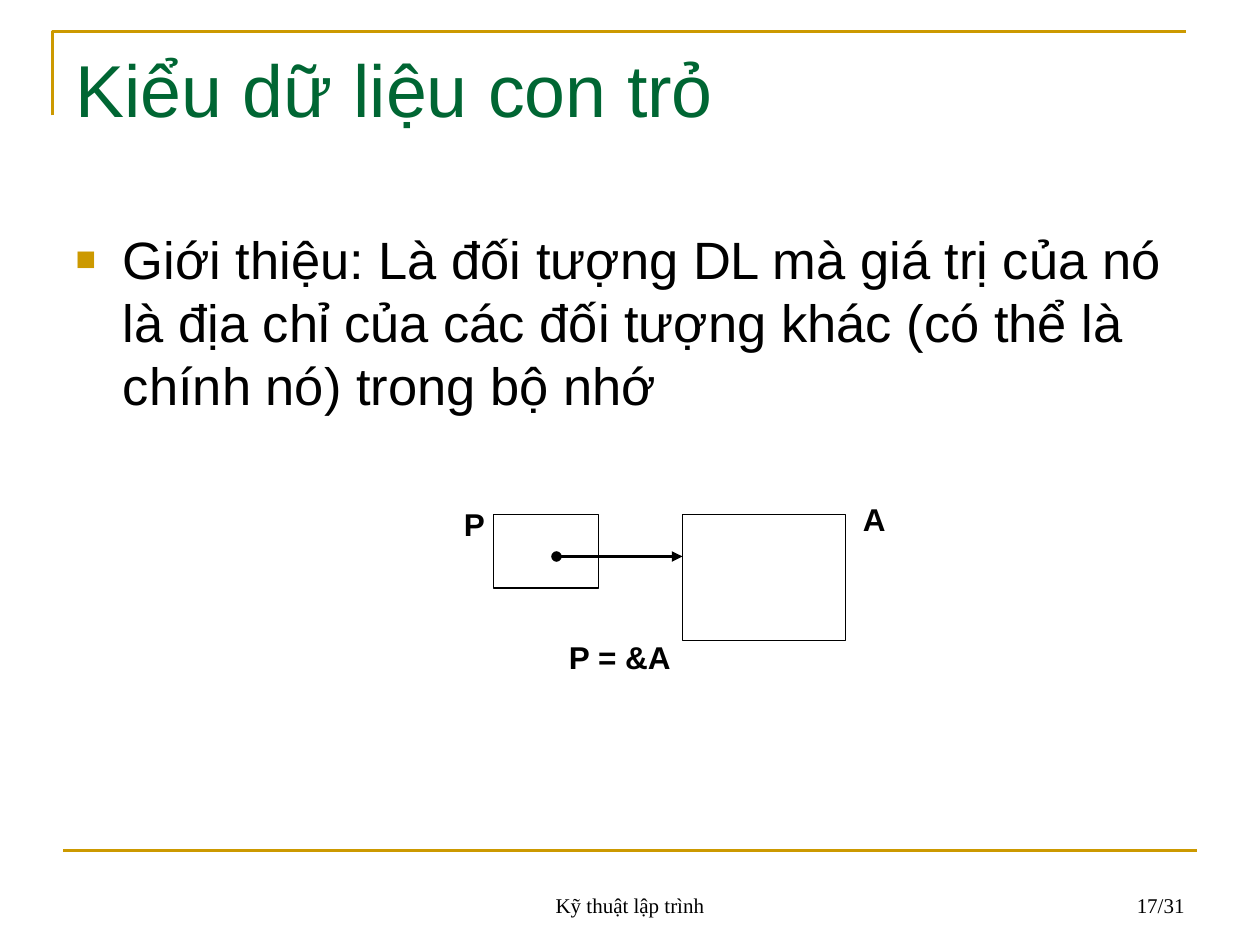
"""Build the slide that introduces the pointer data type."""
import pptx
import pptx.util
import pptx.dml.color
import pptx.enum.shapes
import pptx.enum.text
import pptx.oxml
import pptx.oxml.ns

Pt = pptx.util.Pt
RGB = pptx.dml.color.RGBColor
Align = pptx.enum.text.PP_ALIGN
Anchor = pptx.enum.text.MSO_ANCHOR
Fit = pptx.enum.text.MSO_AUTO_SIZE
Rect = pptx.enum.shapes.MSO_SHAPE.RECTANGLE
Straight = pptx.enum.shapes.MSO_CONNECTOR.STRAIGHT

GOLD = RGB(0xCC, 0x99, 0x00)
GREEN = RGB(0x00, 0x66, 0x33)
BLACK = RGB(0, 0, 0)
WHITE = RGB(255, 255, 255)

TITLE = "Kiểu dữ liệu con trỏ"
BODY = ("Giới thiệu: Là đối tượng DL mà giá trị của nó là địa chỉ "
        "của các đối tượng khác (có thể là chính nó) trong bộ nhớ")
FOOTERS = [
    ("Kỹ thuật lập trình", (246, 492, 228, 36), Align.CENTER),
    ("17/31", (516, 492, 168, 36), Align.RIGHT),
]
LABELS = [
    ("P = &A", (318, 361, 90, 41)),
    ("A", (486, 282, 27, 41)),
    ("P", (258, 285, 27, 41)),
]
BOXES = [(282, 294, 60, 42), (390, 294, 93, 72)]
CORNER = [(30, 66), (30, 18), (678, 18)]
RULE = (36, 486, 684, 486)
ARROW = (318, 318, 390, 318)

FONTS = {
    "title": {"name": "Arial", "size": Pt(42), "color": GREEN},
    "body": {"name": "Arial", "size": Pt(30), "color": BLACK},
    "label": {"name": "Arial", "size": Pt(18), "bold": True, "color": BLACK},
    "foot": {"name": "Times New Roman", "size": Pt(12), "color": BLACK},
}


def place(shape, area):
    for key, value in zip(("left", "top", "width", "height"), area):
        setattr(shape, key, Pt(value))


def write(shape, text, style, align=Align.LEFT, anchor=Anchor.TOP):
    frame = shape.text_frame
    frame.text = text
    look = {"word_wrap": True, "auto_size": Fit.NONE, "vertical_anchor": anchor}
    for key, value in look.items():
        setattr(frame, key, value)
    par = frame.paragraphs[0]
    par.alignment = align
    font = par.runs[0].font
    for key, value in FONTS[style].items():
        if key == "color":
            font.color.rgb = value
        else:
            setattr(font, key, value)
    return par


def add_xml(parent, *parts):
    space = pptx.oxml.ns.nsdecls("a")
    for tag, rest in parts:
        parent.append(pptx.oxml.parse_xml(f"<a:{tag} {space} {rest}"))


def add_box(shapes, area):
    box = shapes.add_shape(Rect, *map(Pt, area))
    box.shadow.inherit = False
    box.fill.solid()
    box.fill.fore_color.rgb = WHITE
    box.line.fill.background()
    return box


def stroke(shape, color, width):
    shape.line.color.rgb = color
    shape.line.width = Pt(width)


def add_line(shapes, ends, color, width):
    line = shapes.add_connector(Straight, *map(Pt, ends))
    stroke(line, color, width)
    add_xml(line._element.spPr, ("effectLst", "/>"))
    return line


def add_frame(shapes):
    start, *rest = [tuple(map(Pt, point)) for point in CORNER]
    build = shapes.build_freeform(*start)
    build.add_line_segments(rest, close=False)
    corner = build.convert_to_shape()
    corner.shadow.inherit = False
    corner.fill.background()
    stroke(corner, GOLD, 1.5)
    add_line(shapes, RULE, GOLD, 1.5)


def add_text(slide):
    title, body = slide.placeholders
    place(title, (36, 21.6, 648, 90))
    write(title, TITLE, "title")
    place(body, (36, 126, 648, 356.4))
    par = write(body, BODY, "body")
    par.space_before = Pt(6)
    props = par._p.get_or_add_pPr()
    indent = Pt(27)
    props.set("marL", str(indent))
    props.set("indent", str(-indent))
    add_xml(props, ("buClr", f'><a:srgbClr val="{GOLD}"/></a:buClr>'),
            ("buSzPct", 'val="65000"/>'),
            ("buFont", 'typeface="Arial"/>'),
            ("buChar", 'char="■"/>'))
    for text, area, align in FOOTERS:
        foot = slide.shapes.add_textbox(*map(Pt, area))
        write(foot, text, "foot", align, Anchor.BOTTOM)


def add_graph(shapes):
    for text, area in LABELS:
        write(add_box(shapes, area), text, "label")
    for area in BOXES:
        stroke(add_box(shapes, area), BLACK, 0.75)
    arrow = add_line(shapes, ARROW, BLACK, 2)
    add_xml(arrow.line._get_or_add_ln(),
            ("headEnd", 'type="oval"/>'), ("tailEnd", 'type="triangle"/>'))


def main():
    deck = pptx.Presentation()
    deck.slide_width, deck.slide_height = Pt(720), Pt(540)
    slide = deck.slides.add_slide(deck.slide_layouts[1])
    add_frame(slide.shapes)
    add_text(slide)
    add_graph(slide.shapes)
    deck.save("out.pptx")


if __name__ == "__main__":
    main()
